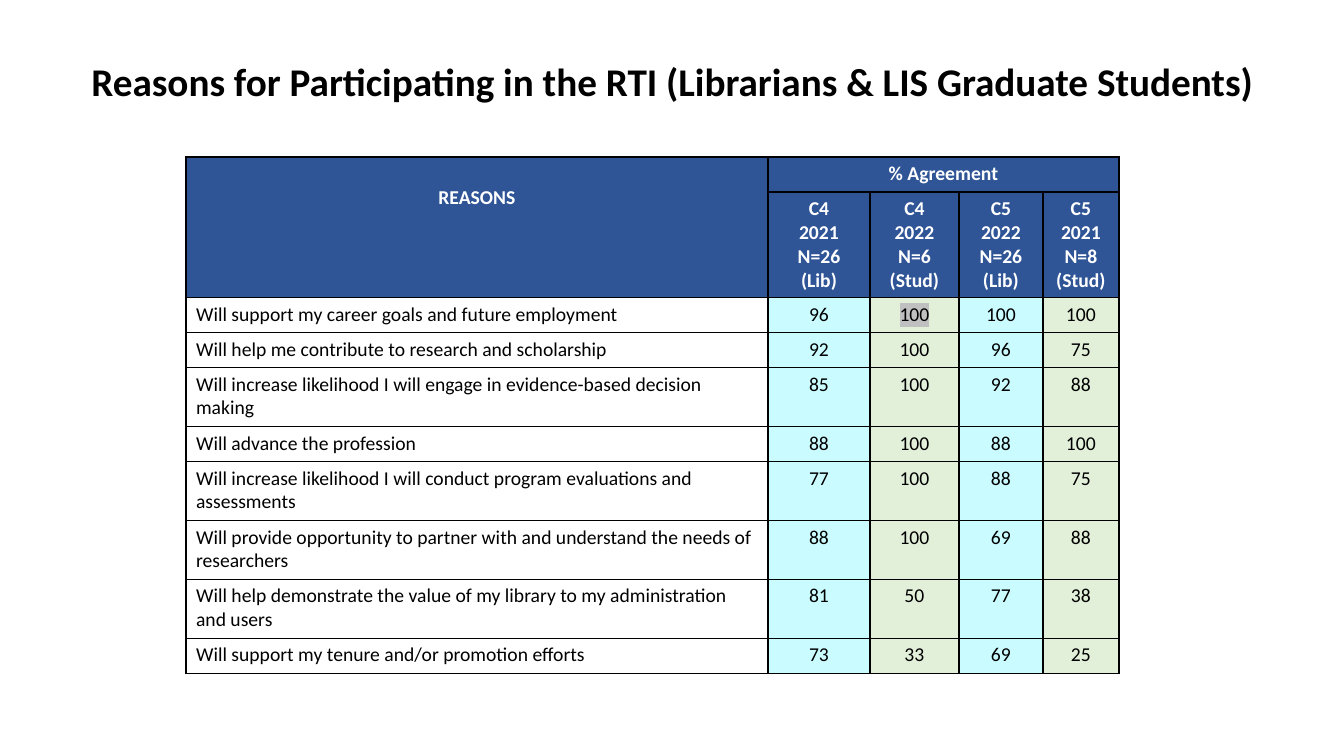
from lxml.etree import SubElement
from pptx import Presentation
from pptx.dml.color import RGBColor
from pptx.enum.text import MSO_ANCHOR, PP_ALIGN
from pptx.oxml import parse_xml
from pptx.oxml.ns import nsdecls, qn
from pptx.util import Pt

EMU_PER_PX = 914400 / 100.8
BLACK = RGBColor(0x00, 0x00, 0x00)
WHITE = RGBColor(0xFF, 0xFF, 0xFF)
HEADER_BLUE = RGBColor(0x2F, 0x55, 0x97)
LIBRARIAN_CYAN = RGBColor(0xCA, 0xFC, 0xFF)
STUDENT_GREEN = RGBColor(0xE2, 0xF0, 0xD9)
HIGHLIGHT_GRAY = RGBColor(0xC0, 0xC0, 0xC0)

COLUMN_WIDTHS = [582, 102, 89, 84, 76]
ROW_HEIGHTS = [35, 105, 35, 35, 59, 35, 59, 59, 59, 35]
COLUMN_FILLS = [WHITE, LIBRARIAN_CYAN, STUDENT_GREEN, LIBRARIAN_CYAN, STUDENT_GREEN]
HEADER_ROWS = 2
ROWS = [
    ["REASONS", "% Agreement", "", "", ""],
    ["", "C4\n2021\nN=26\n(Lib)", "C4\n2022\nN=6\n(Stud)",
     "C5\n2022\nN=26\n(Lib)", "C5\n2021\nN=8\n(Stud)"],
    ["Will support my career goals and future employment", 96, 100, 100, 100],
    ["Will help me contribute to research and scholarship", 92, 100, 96, 75],
    ["Will increase likelihood I will engage in evidence-based decision making",
     85, 100, 92, 88],
    ["Will advance the profession", 88, 100, 88, 100],
    ["Will increase likelihood I will conduct program evaluations and assessments",
     77, 100, 88, 75],
    ["Will provide opportunity to partner with and understand the needs of researchers",
     88, 100, 69, 88],
    ["Will help demonstrate the value of my library to my administration and users",
     81, 50, 77, 38],
    ["Will support my tenure and/or promotion efforts", 73, 33, 69, 25],
]


def px(length):
    return round(length * EMU_PER_PX)


def format_text(frame, size, color, bold, alignment):
    for para in frame.paragraphs:
        para.alignment = alignment
        for span in para.runs:
            values = {"name": "Calibri", "size": Pt(size), "bold": bold}
            for name, value in values.items():
                setattr(span.font, name, value)
            span.font.color.rgb = color


deck = Presentation()
deck.slide_width, deck.slide_height = px(1344), px(756)
page = deck.slides.add_slide(deck.slide_layouts[5])

title = page.shapes.title
title_box = {"left": 14, "top": 52, "width": 1316, "height": 57}
for name, length in title_box.items():
    setattr(title, name, px(length))
title.text = "Reasons for Participating in the RTI (Librarians & LIS Graduate Students)"
title.text_frame.vertical_anchor = MSO_ANCHOR.MIDDLE
format_text(title.text_frame, 28, BLACK, True, PP_ALIGN.CENTER)

table = page.shapes.add_table(
    len(ROWS), len(COLUMN_WIDTHS), px(186), px(157),
    px(sum(COLUMN_WIDTHS)), px(sum(ROW_HEIGHTS))).table
table.first_row = table.horz_banding = False
for column, width in zip(table.columns, COLUMN_WIDTHS):
    column.width = px(width)
for row, height in zip(table.rows, ROW_HEIGHTS):
    row.height = px(height)
table.cell(0, 0).merge(table.cell(1, 0))
table.cell(0, 1).merge(table.cell(0, 4))

for row_index, values in enumerate(ROWS):
    is_header = row_index < HEADER_ROWS
    for column_index, value in enumerate(values):
        cell = table.cell(row_index, column_index)
        cell.fill.solid()
        cell.fill.fore_color.rgb = HEADER_BLUE if is_header else COLUMN_FILLS[column_index]
        for position, side in enumerate(["lnL", "lnR", "lnT", "lnB"]):
            border = parse_xml(
                f'<a:{side} {nsdecls("a")} w="{Pt(1)}"><a:solidFill>'
                f'<a:srgbClr val="{BLACK}"/></a:solidFill></a:{side}>')
            cell._tc.get_or_add_tcPr().insert(position, border)
        if cell.is_spanned:
            continue
        cell.text = str(value)
        is_reason = column_index == 0 and not is_header
        format_text(cell.text_frame, 14, WHITE if is_header else BLACK, is_header,
                    PP_ALIGN.LEFT if is_reason else PP_ALIGN.CENTER)

table.cell(0, 0).margin_top = px(29)

marked_font = table.cell(2, 2).text_frame.paragraphs[0].runs[0].font
run_properties = marked_font._element if hasattr(marked_font, "_element") else marked_font._rPr
highlight = SubElement(run_properties, qn("a:highlight"))
SubElement(highlight, qn("a:srgbClr")).set("val", str(HIGHLIGHT_GRAY))
run_properties.find(qn("a:solidFill")).addnext(highlight)

deck.save("out.pptx")
